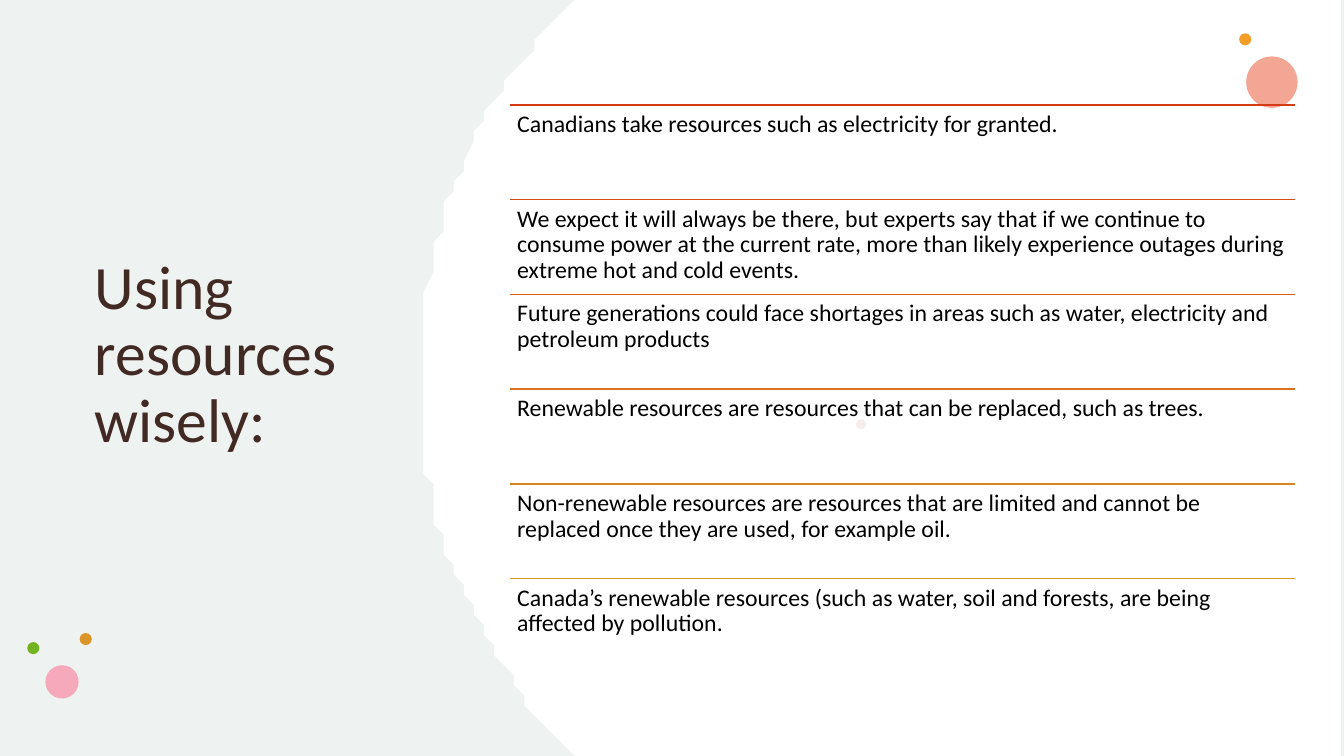
from dataclasses import dataclass

from lxml.etree import SubElement
from pptx import Presentation
from pptx.dml.color import RGBColor
from pptx.enum.shapes import MSO_CONNECTOR, MSO_SHAPE
from pptx.enum.text import MSO_ANCHOR, MSO_AUTO_SIZE, PP_ALIGN
from pptx.oxml.ns import qn
from pptx.util import Inches, Pt


@dataclass(frozen=True)
class Theme:
    font: str = "Calibri"
    title_size: int = 44
    body_size: int = 17
    line_spacing: float = 0.9
    rule_width: int = 1
    backdrop: str = "EEF2F1"
    panel: str = "FFFFFF"
    title: str = "412A24"
    body: str = "000000"
    rules: tuple = ("D53B17", "D74D1A", "D95F1C", "DA711F", "DC8322", "DB9427")
    coral: str = "EF846B"
    orange: str = "F39E29"
    blush: str = "E3BEBE"
    amber: str = "DB9427"
    pink: str = "F5A9BB"
    green: str = "73B320"


def bezier(start, first, second, end, steps=32):
    """Points along a cubic curve, without its start."""
    points = []
    for step in range(1, steps + 1):
        t = step / steps
        u = 1 - t
        points.append(tuple(
            u**3 * a + 3 * u * u * t * b + 3 * u * t * t * c + t**3 * d
            for a, b, c, d in zip(start, first, second, end)
        ))
    return points


class SlideBuilder:
    """Places elements on a grid whose columns and rows are a tenth of an inch."""

    def __init__(self, deck, theme):
        self.theme = theme
        self.cell = Inches(0.1)
        self.slide = deck.slides.add_slide(deck.slide_layouts[5])
        background = self.slide.background.fill
        background.solid()
        background.fore_color.rgb = RGBColor.from_string(theme.backdrop)

    def grid(self, *cells):
        return [round(count * self.cell) for count in cells]

    def paint(self, shape, color, opacity=100):
        shape.shadow.inherit = False
        shape.line.fill.background()
        shape.fill.solid()
        shape.fill.fore_color.rgb = RGBColor.from_string(color)
        if opacity < 100:
            fill = shape._element.spPr.find(qn("a:solidFill"))
            SubElement(fill.find(qn("a:srgbClr")), qn("a:alpha"), val=str(opacity * 1000))

    def set_text(self, box, text, size, color):
        frame = box.text_frame
        frame.text = text
        frame.word_wrap = True
        frame.auto_size = MSO_AUTO_SIZE.NONE
        para = frame.paragraphs[0]
        para.alignment = PP_ALIGN.LEFT
        para.line_spacing = self.theme.line_spacing
        font = para.runs[0].font
        font.name = self.theme.font
        font.size = Pt(size)
        font.color.rgb = RGBColor.from_string(color)
        return frame

    def title(self, text, place, bottom_inset):
        box = self.slide.shapes.title
        box.left, box.top, box.width, box.height = self.grid(*place)
        frame = self.set_text(box, text, self.theme.title_size, self.theme.title)
        frame.vertical_anchor = MSO_ANCHOR.MIDDLE
        frame.margin_bottom = self.grid(bottom_inset)[0]

    def text(self, text, place, inset):
        box = self.slide.shapes.add_textbox(*self.grid(*place))
        frame = self.set_text(box, text, self.theme.body_size, self.theme.body)
        frame.vertical_anchor = MSO_ANCHOR.TOP
        margin = self.grid(inset)[0]
        frame.margin_left = frame.margin_right = margin
        frame.margin_top = frame.margin_bottom = margin

    def rule(self, left, top, width, color):
        line = self.slide.shapes.add_connector(
            MSO_CONNECTOR.STRAIGHT, *self.grid(left, top, left + width, top))
        line.line.color.rgb = RGBColor.from_string(color)
        line.line.width = Pt(self.theme.rule_width)
        SubElement(line._element.spPr, qn("a:effectLst"))

    def dot(self, left, top, size, color, opacity=100):
        circle = self.slide.shapes.add_shape(
            MSO_SHAPE.OVAL, *self.grid(left, top, size, size))
        self.paint(circle, color, opacity)

    def outline(self, points, color):
        builder = self.slide.shapes.build_freeform(*points[0], scale=self.cell)
        builder.add_line_segments(points[1:], close=True)
        self.paint(builder.convert_to_shape(), color)


STATEMENTS = (
    "Canadians take resources such as electricity for granted.",
    "We expect it will always be there, but experts say that if we continue to "
    "consume power at the current rate, more than likely experience outages "
    "during extreme hot and cold events.",
    "Future generations could face shortages in areas such as water, electricity "
    "and petroleum products",
    "Renewable resources are resources that can be replaced, such as trees.",
    "Non-renewable resources are resources that are limited and cannot be "
    "replaced once they are used, for example oil.",
    "Canada’s renewable resources (such as water, soil and forests, are being "
    "affected by pollution.",
)


def main():
    theme = Theme()
    deck = Presentation()
    deck.slide_width, deck.slide_height = Inches(13.33), Inches(7.5)
    page = SlideBuilder(deck, theme)

    # White panel with a curved left edge
    lower, middle, upper = (53.9, 71.7), (41.6, 37.5), (55.6, 1.4)
    page.outline(
        [(57, 0), (133.3, 0), (133.3, 75), (56.9, 75), lower]
        + bezier(lower, (46.2, 62.4), (41.6, 50.5), middle)
        + bezier(middle, (41.6, 23.6), (46.9, 11), upper),
        theme.panel,
    )

    # Scattered dots
    for dot in (
        (123.6, 5.6, 5.1, theme.coral, 72),
        (122.9, 3.3, 1.2, theme.orange),
        (84.9, 41.6, 1, theme.blush, 28),
        (7.9, 62.8, 1.2, theme.amber),
        (4.5, 66, 3.3, theme.pink),
        (2.7, 63.7, 1.2, theme.green),
    ):
        page.dot(*dot)

    # Title, raised by half a line above the middle
    page.title("Using resources wisely:", (8.4, 10.4, 31.3, 56.4), bottom_inset=7.1)

    # Statements, each under its own rule
    left, top, width, height = 50.6, 10.4, 77.85, 9.4
    for row, (statement, color) in enumerate(zip(STATEMENTS, theme.rules)):
        row_top = top + row * height
        page.rule(left, row_top, width, color)
        page.text(statement, (left, row_top, width, height), inset=0.7)

    deck.save("out.pptx")


if __name__ == "__main__":
    main()
